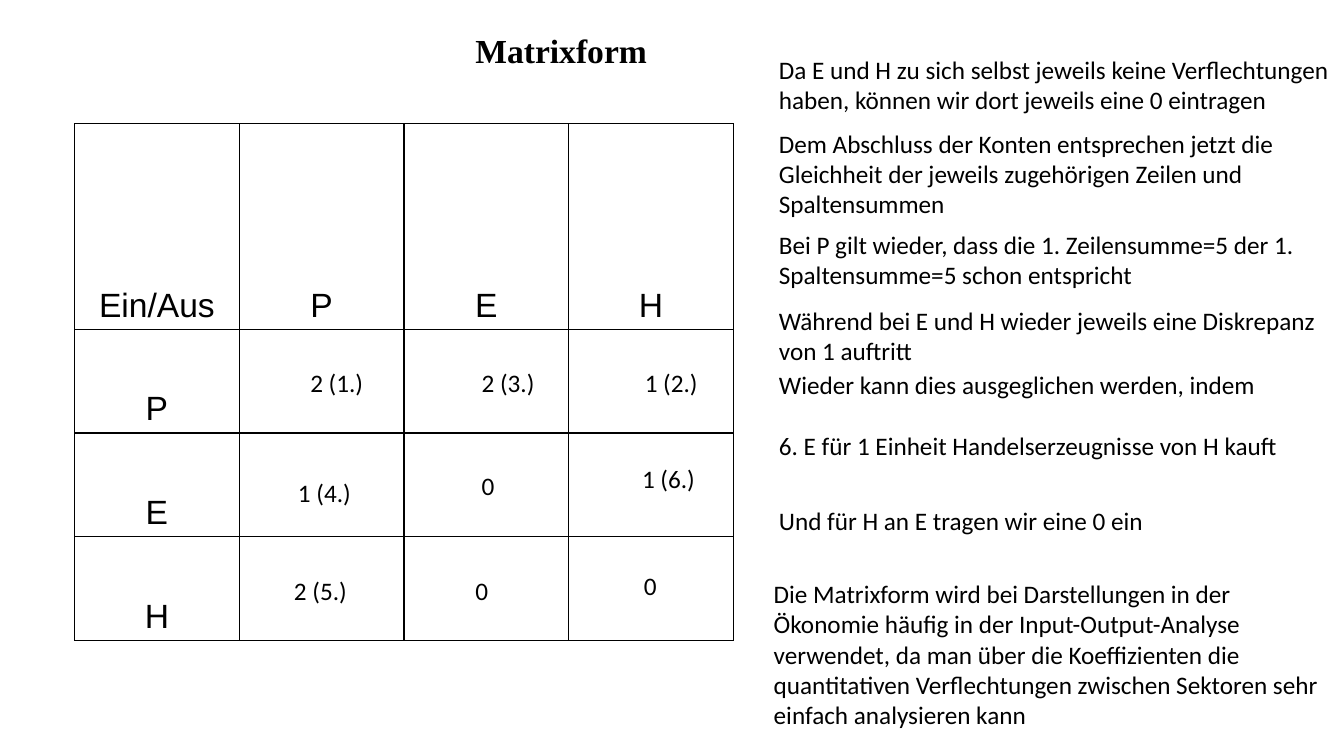
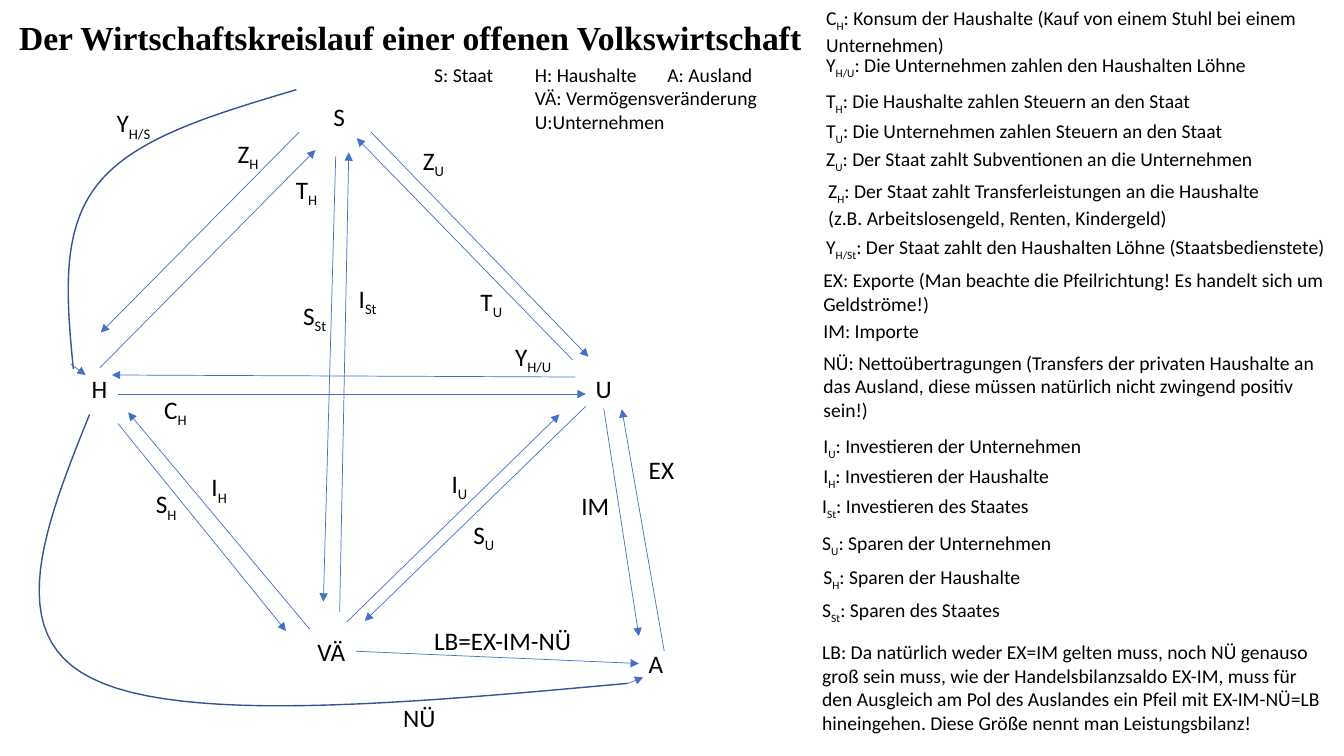
from lxml import etree
from pptx import Presentation
from pptx.dml.color import RGBColor
from pptx.enum.shapes import MSO_CONNECTOR
from pptx.enum.text import MSO_ANCHOR, MSO_AUTO_SIZE, PP_ALIGN
from pptx.oxml.ns import qn
from pptx.util import Cm, Pt

STRAIGHT = MSO_CONNECTOR.STRAIGHT
MIDDLE, BOTTOM_ANCHOR = MSO_ANCHOR.MIDDLE, MSO_ANCHOR.BOTTOM
GROW = MSO_AUTO_SIZE.SHAPE_TO_FIT_TEXT
CENTER = PP_ALIGN.CENTER
TOP, LEFT, BOTTOM, RIGHT = range(4)

COLORS = {"text": "000000", "border": "000000", "arrow": "4472C4", "curve": "325491"}
BODY_FONT, TITLE_FONT, TABLE_FONT = "Calibri", "Times New Roman", "Arial"
LABEL_HEIGHT = 1.02
CURVE_STEPS = 24

# All positions and sizes are in centimetres; text between bars is subscript.
MATRIX_TITLE = ("Matrixform", 11.73, 0.61, 17.91)
MATRIX_HEADER = ["Ein/Aus", "P", "E", "H"]
MATRIX_ORIGIN = (1.88, 3.12)
COLUMN_WIDTH = 4.15
ROW_HEIGHTS = [5.18, 2.61, 2.61, 2.61]
MATRIX_VALUES = [  # text, left, top, width
    ("2 (1.)", 7.57, 9.12, 1.85),
    ("1 (2.)", 16, 9.12, 1.85),
    ("2 (3.)", 11.89, 9.12, 1.85),
    ("1 (4.)", 7.26, 11.91, 1.85),
    ("2 (5.)", 7.16, 14.38, 1.85),
    ("0", 11.89, 11.73, 0.84),
    ("0", 15.98, 14.25, 0.84),
    ("1 (6.)", 15.93, 11.56, 1.85),
    ("0", 11.73, 14.38, 0.84),
]
MATRIX_NOTES = [  # text, left, top, width, height
    ("Da E und H zu sich selbst jeweils keine Verflechtungen haben, können wir dort "
     "jeweils eine 0 eintragen", 19.38, 1.24, 14.48, 1.7),
    ("Dem Abschluss der Konten entsprechen jetzt die Gleichheit der jeweils zugehörigen "
     "Zeilen und Spaltensummen", 19.38, 3.1, 14.48, 2.57),
    ("Bei P gilt wieder, dass die 1. Zeilensumme=5 der 1. Spaltensumme=5 schon entspricht",
     19.38, 5.66, 14.48, 1.93),
    ("Während bei E und H wieder jeweils eine Diskrepanz von 1 auftritt",
     19.38, 7.57, 14.48, 1.93),
    ("Wieder kann dies ausgeglichen werden, indem\n"
     "6. E für 1 Einheit Handelserzeugnisse von H kauft", 19.38, 9.17, 14.48, 2.74),
    ("Und für H an E tragen wir eine 0 ein", 19.38, 12.62, 14.48, 1.63),
    ("Die Matrixform wird bei Darstellungen in der Ökonomie häufig in der "
     "Input-Output-Analyse verwendet, da man über die Koeffizienten die quantitativen "
     "Verflechtungen zwischen Sektoren sehr einfach analysieren kann",
     19.25, 14.45, 14.48, 4.04),
]

CYCLE_TITLE = ("Der Wirtschaftskreislauf einer offenen Volkswirtschaft", 0.23, 0.28, 20.35)
POLES = [  # text, left, top, width
    ("H", 2.06, 9.27, 0.91),
    ("U", 14.76, 9.27, 0.91),
    ("S", 8.15, 2.44, 0.81),
    ("A", 16.1, 16.21, 0.89),
    ("VÄ", 7.75, 15.9, 1.22),
]
FLOW_LABELS = [
    ("C|H", 3.89, 9.8, 1.12),
    ("Y|H/U", 12.73, 8.48, 1.52),
    ("T|H", 7.21, 4.27, 1.09),
    ("T|U", 11.86, 7.09, 1.09),
    ("Z|H", 5.74, 3.35, 1.07),
    ("Z|U", 10.41, 3.53, 1.09),
    ("Y|H/S", 2.69, 2.59, 1.45),
    ("EX", 16.1, 11.33, 1.17),
    ("IM", 14.4, 12.22, 1.22),
    ("NÜ", 9.91, 17.58, 1.35),
    ("I|U", 11.13, 11.68, 0.94),
    ("I|St", 8.79, 7.01, 1.02),
    ("I|H", 5.08, 11.76, 0.94),
    ("S|U", 11.68, 12.95, 1.09),
    ("S|St", 7.39, 7.44, 1.14),
    ("S|H", 3.68, 12.19, 1.07),
    ("LB=EX-IM-NÜ", 10.69, 15.62, 4.01),
]
FLOW_ARROWS = {  # start x, start y, end x, end y
    "C_H": (2.97, 9.93, 14.76, 9.93),
    "Y_H/U": (14.5, 9.5, 2.82, 9.45),
    "T_U": (14.43, 9.07, 8.99, 3.48),
    "T_H": (2.51, 9.19, 7.95, 3.78),
    "Z_U": (9.35, 3.33, 14.83, 8.99),
    "Z_H": (7.54, 3.33, 2.54, 8.38),
    "EX": (16.74, 16.41, 15.67, 10.31),
    "IM": (15.21, 10.31, 16.1, 16.03),
    "S_H": (2.97, 10.67, 7.21, 15.9),
    "S_U": (14.76, 10.24, 9.19, 15.65),
    "S_St": (8.46, 3.94, 8.15, 15.16),
    "I_St": (8.56, 15.42, 8.79, 3.84),
    "I_U": (8.74, 15.67, 14.1, 10.44),
    "I_H": (7.8, 15.85, 3.23, 10.39),
    "LB": (8.94, 16.43, 16.1, 16.74),
}
ARROW_STARTS = {"T_H": ("H", TOP), "IM": ("U", BOTTOM), "LB": ("VÄ", RIGHT)}
ARROW_ENDS = {"LB": ("A", LEFT)}
CURVED_FLOWS = [  # Bézier points (start, then three per segment), arrow tip
    ([(7.47, 2.26), (5.44, 2.87), (3.4, 3.45), (2.46, 4.65),
      (1.52, 5.82), (1.68, 7.54), (1.85, 9.3)], (1.78, 9.17, 2.16, 9.45)),
    ([(2.26, 10.44), (1.14, 13.21), (0.05, 15.98), (2.31, 17.09),
      (4.57, 18.24), (10.21, 17.73), (15.82, 17.22)], (15.82, 17.22, 16.21, 17.07)),
]
EXPLANATIONS = [  # text, left, top, width, height
    ("C|H|: Konsum der Haushalte (Kauf von einem Stuhl bei einem Unternehmen)",
     20.57, 0.03, 13.03, 1.27),
    ("Y|H/U|: Die Unternehmen zahlen den Haushalten Löhne", 20.57, 1.22, 13.03, 1.27),
    ("T|H|: Die Haushalte zahlen Steuern an den Staat", 20.57, 2.11, 13.03, 1.27),
    ("T|U|: Die Unternehmen zahlen Steuern an den Staat", 20.57, 2.87, 13.03, 1.27),
    ("Z|U|: Der Staat zahlt Subventionen an die Unternehmen", 20.57, 3.58, 13.03, 1.27),
    ("Z|H|: Der Staat zahlt Transferleistungen an die Haushalte (z.B. Arbeitslosengeld, "
     "Renten, Kindergeld)", 20.62, 4.39, 12.07, 1.27),
    ("Y|H/St|: Der Staat zahlt den Haushalten Löhne (Staatsbedienstete)",
     20.57, 5.79, 13.31, 1.07),
    ("EX: Exporte (Man beachte die Pfeilrichtung! Es handelt sich um Geldströme!)",
     20.5, 6.63, 13.31, 1.07),
    ("IM: Importe", 20.5, 7.9, 13.31, 1.07),
    ("NÜ: Nettoübertragungen (Transfers der privaten Haushalte an das Ausland, diese "
     "müssen natürlich nicht zwingend positiv sein!)", 20.5, 8.71, 13.31, 1.07),
    ("I|U|: Investieren der Unternehmen", 20.5, 10.82, 13.03, 1.27),
    ("I|H|: Investieren der Haushalte", 20.5, 11.56, 13.03, 1.27),
    ("I|St|: Investieren des Staates", 20.47, 12.32, 13.03, 1.27),
    ("S|U|: Sparen der Unternehmen", 20.47, 13.26, 13.03, 1.27),
    ("S|H|: Sparen der Haushalte", 20.5, 14.1, 13.03, 1.27),
    ("S|St|: Sparen des Staates", 20.47, 14.94, 13.03, 0.86),
    ("LB: Da natürlich weder EX=IM gelten muss, noch NÜ genauso groß sein muss, wie der "
     "Handelsbilanzsaldo EX-IM, muss für den Ausgleich am Pol des Auslandes ein Pfeil mit "
     "EX-IM-NÜ=LB hineingehen. Diese Größe nennt man Leistungsbilanz!",
     20.47, 16, 13.31, 2.82),
]
POLE_LEGEND = ("S: Staat\tH: Haushalte\tA: Ausland\n\tVÄ: Vermögensveränderung\n"
               "\tU:Unternehmen", 10.69, 1.45, 9.73, 2.01)
LEGEND_TABS = (2.54, 5.88)


def write(text_frame, text, *, size=18, font=BODY_FONT, bold=False, align=None,
          line_spacing=None, paragraph_gap=0, tabs=()):
    """Fill a text frame: newlines split paragraphs, bars toggle subscript."""
    for index, line in enumerate(text.split("\n")):
        paragraph = text_frame.add_paragraph() if index else text_frame.paragraphs[0]
        if align is not None:
            paragraph.alignment = align
        if line_spacing:
            paragraph.line_spacing = Pt(line_spacing)
        if index and paragraph_gap:
            paragraph.space_before = Pt(paragraph_gap)
        if tabs:
            tab_list = etree.SubElement(paragraph._p.get_or_add_pPr(), qn("a:tabLst"))
            for position in tabs:
                etree.SubElement(tab_list, qn("a:tab"), pos=str(int(Cm(position))), algn="l")
        for part, content in enumerate(line.split("|")):
            run = paragraph.add_run()
            run.text = content
            run.font.size, run.font.name, run.font.bold = Pt(size), font, bold
            run.font.color.rgb = RGBColor.from_string(COLORS["text"])
            if part % 2:
                run._r.get_or_add_rPr().set("baseline", "-25000")


def add_text(slide, text, left, top, width, height=LABEL_HEIGHT, *, wrap=True,
             anchor=None, **text_format):
    shape = slide.shapes.add_textbox(Cm(left), Cm(top), Cm(width), Cm(height))
    text_frame = shape.text_frame
    text_frame.word_wrap = wrap
    if not wrap:
        text_frame.auto_size = GROW
    if anchor is not None:
        text_frame.vertical_anchor = anchor
    write(text_frame, text, **text_format)
    return shape


def add_titled_slide(presentation, title):
    slide = presentation.slides.add_slide(presentation.slide_layouts[6])
    add_text(slide, *title, 1.3, anchor=MIDDLE, size=24, font=TITLE_FONT, bold=True)
    return slide


def add_arrow(shapes, points):
    arrow = shapes.add_connector(STRAIGHT, *(Cm(value) for value in points))
    arrow.line.width = Pt(0.5)
    arrow.line.color.rgb = RGBColor.from_string(COLORS["arrow"])
    etree.SubElement(arrow.line._get_or_add_ln(), qn("a:tailEnd"), type="triangle")
    etree.SubElement(arrow._element.spPr, qn("a:effectLst"))
    return arrow


def bezier_points(controls):
    """Sample a chain of cubic Bézier segments, without its start point."""
    for first in range(0, len(controls) - 1, 3):
        segment = controls[first:first + 4]
        for step in range(1, CURVE_STEPS + 1):
            t = step / CURVE_STEPS
            weights = ((1 - t) ** 3, 3 * t * (1 - t) ** 2, 3 * t * t * (1 - t), t ** 3)
            yield tuple(Cm(sum(weight * point[axis] for weight, point in zip(weights, segment)))
                        for axis in (0, 1))


def add_curved_flow(slide, controls, tip):
    shapes = slide.shapes.add_group_shape().shapes
    builder = shapes.build_freeform(Cm(controls[0][0]), Cm(controls[0][1]))
    builder.add_line_segments(list(bezier_points(controls)), close=False)
    curve = builder.convert_to_shape()
    curve.shadow.inherit = False
    curve.fill.background()
    curve.line.width = Pt(1)
    curve.line.color.rgb = RGBColor.from_string(COLORS["curve"])
    add_arrow(shapes, tip)


def set_borders(cell):
    properties = cell._tc.get_or_add_tcPr()
    for index, side in enumerate(("lnL", "lnR", "lnT", "lnB")):
        line = etree.Element(qn(f"a:{side}"), w=str(int(Pt(1))))
        fill = etree.SubElement(line, qn("a:solidFill"))
        etree.SubElement(fill, qn("a:srgbClr"), val=COLORS["border"])
        properties.insert(index, line)


def add_matrix(slide):
    size = len(MATRIX_HEADER)
    left, top = MATRIX_ORIGIN
    table = slide.shapes.add_table(size, size, Cm(left), Cm(top), Cm(COLUMN_WIDTH * size),
                                   Cm(sum(ROW_HEIGHTS))).table
    table.first_row = table.horz_banding = False
    for index, height in enumerate(ROW_HEIGHTS):
        table.rows[index].height = Cm(height)
        table.columns[index].width = Cm(COLUMN_WIDTH)
        for column in range(size):
            cell = table.cell(index, column)
            cell.fill.background()
            set_borders(cell)
            if index == 0 or column == 0:
                cell.vertical_anchor = BOTTOM_ANCHOR
                write(cell.text_frame, MATRIX_HEADER[index + column], size=24,
                      font=TABLE_FONT, align=CENTER, line_spacing=25.6)


def build_matrix_slide(presentation):
    slide = add_titled_slide(presentation, MATRIX_TITLE)
    add_matrix(slide)
    for value in MATRIX_VALUES:
        add_text(slide, *value, wrap=False)
    for note in MATRIX_NOTES:
        add_text(slide, *note, paragraph_gap=22)


def build_cycle_slide(presentation):
    slide = add_titled_slide(presentation, CYCLE_TITLE)
    poles = {pole[0]: add_text(slide, *pole, wrap=False) for pole in POLES}
    for label in FLOW_LABELS:
        add_text(slide, *label, wrap=False)
    for name, points in FLOW_ARROWS.items():
        arrow = add_arrow(slide.shapes, points)
        if name in ARROW_STARTS:
            pole, side = ARROW_STARTS[name]
            arrow.begin_connect(poles[pole], side)
        if name in ARROW_ENDS:
            pole, side = ARROW_ENDS[name]
            arrow.end_connect(poles[pole], side)
    for controls, tip in CURVED_FLOWS:
        add_curved_flow(slide, controls, tip)
    for explanation in EXPLANATIONS:
        add_text(slide, *explanation, size=14)
    add_text(slide, *POLE_LEGEND, size=14, tabs=LEGEND_TABS)


def main():
    presentation = Presentation()
    presentation.slide_width, presentation.slide_height = Cm(33.87), Cm(19.05)
    build_matrix_slide(presentation)
    build_cycle_slide(presentation)
    presentation.save("out.pptx")


if __name__ == "__main__":
    main()
